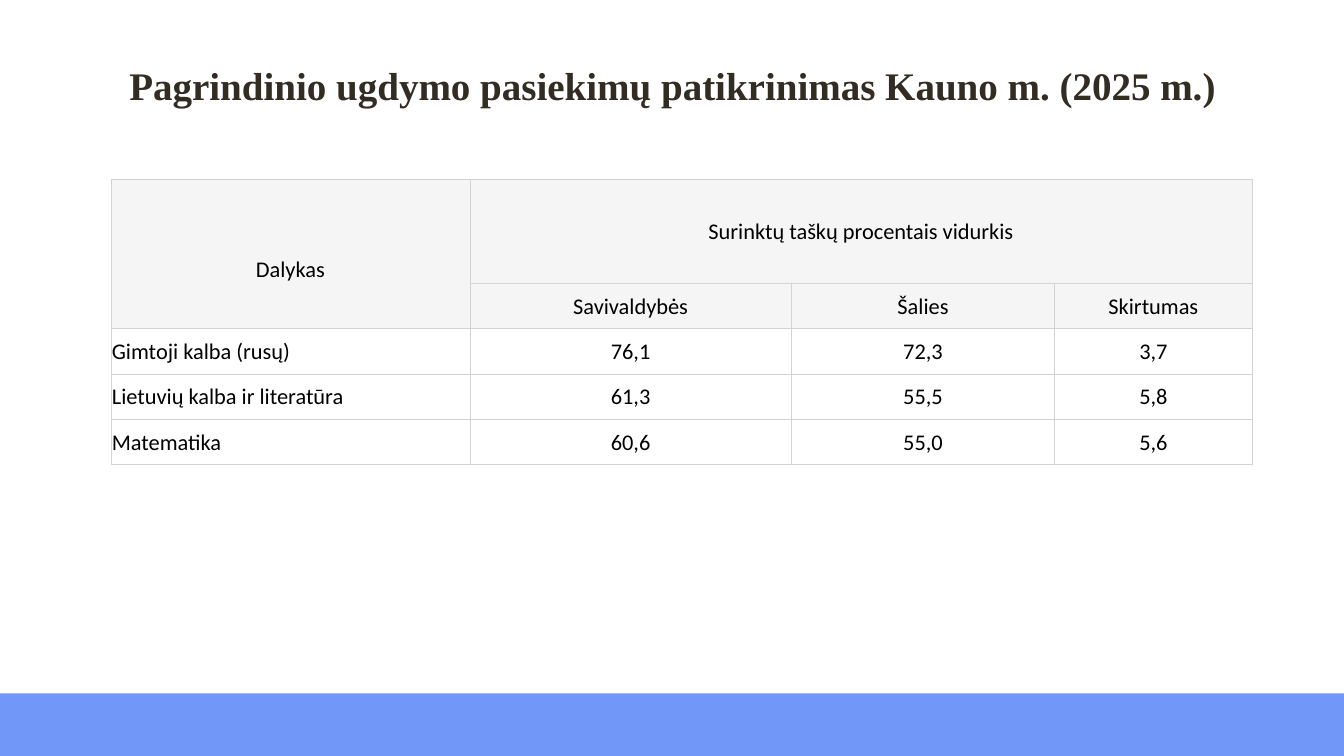
from dataclasses import dataclass

from lxml import etree
from pptx import Presentation
from pptx.dml.color import RGBColor
from pptx.enum.shapes import MSO_SHAPE
from pptx.enum.text import MSO_ANCHOR, MSO_AUTO_SIZE, PP_ALIGN
from pptx.oxml.ns import qn
from pptx.util import Inches, Pt

RECTANGLE = MSO_SHAPE.RECTANGLE
MIDDLE, BOTTOM = MSO_ANCHOR.MIDDLE, MSO_ANCHOR.BOTTOM
CENTER, LEFT = PP_ALIGN.CENTER, PP_ALIGN.LEFT
NO_AUTOFIT = MSO_AUTO_SIZE.NONE


@dataclass(frozen=True)
class Theme:
    """Colours, fonts and type sizes of the slide."""
    title_font: str = "Times New Roman"
    title_size: float = 27.9
    title_color: str = "322C23"
    table_font: str = "Calibri"
    table_size: float = 16
    table_color: str = "000000"
    header_fill: str = "F5F5F5"
    border_color: str = "D3D3D3"
    border_width: float = 0.5
    bar_fill: str = "7198F8"


THEME = Theme()
TITLE = "Pagrindinio ugdymo pasiekimų patikrinimas Kauno m. (2025 m.)"
HEADER_ROWS = 2
COLUMN_WIDTHS = (3.56, 3.19, 2.61, 1.96)
ROW_HEIGHTS = (1.03, 0.45, 0.45, 0.45, 0.45)
RESULTS = (
    ("Dalykas", "Surinktų taškų procentais vidurkis", "", ""),
    ("", "Savivaldybės", "Šalies", "Skirtumas"),
    ("Gimtoji kalba (rusų)", "76,1", "72,3", "3,7"),
    ("Lietuvių kalba ir literatūra", "61,3", "55,5", "5,8"),
    ("Matematika", "60,6", "55,0", "5,6"),
)


def add_text(paragraph, text, font_name, size, color, bold=False):
    """Add one formatted run to a paragraph."""
    run = paragraph.add_run()
    run.text = text
    run.font.name = font_name
    run.font.size = Pt(size)
    run.font.bold = bold
    run.font.color.rgb = RGBColor.from_string(color)


def add_bottom_bar(slide):
    """Draw the coloured bar along the bottom edge."""
    bar = slide.shapes.add_shape(
        RECTANGLE, Inches(0), Inches(6.88), Inches(13.33), Inches(0.62))
    bar.shadow.inherit = False
    bar.fill.solid()
    bar.fill.fore_color.rgb = RGBColor.from_string(THEME.bar_fill)
    bar.line.fill.background()


def fill_title(slide):
    """Place and format the title placeholder."""
    title = slide.shapes.title
    title.left, title.top = Inches(0.92), Inches(0.4)
    title.width, title.height = Inches(11.5), Inches(0.73)
    frame = title.text_frame
    frame.auto_size = NO_AUTOFIT
    frame.word_wrap = True
    frame.vertical_anchor = BOTTOM
    paragraph = frame.paragraphs[0]
    paragraph.alignment = CENTER
    paragraph.line_spacing = 0.9
    add_text(paragraph, TITLE, THEME.title_font, THEME.title_size,
             THEME.title_color, bold=True)


def set_borders(cell, hidden_side):
    """Outline a cell, leaving the hidden side without a line."""
    properties = cell._tc.get_or_add_tcPr()
    for side in "LRTB":
        line = etree.SubElement(properties, qn(f"a:ln{side}"),
                                w=str(Pt(THEME.border_width)))
        if side == hidden_side:
            etree.SubElement(line, qn("a:noFill"))
        else:
            fill = etree.SubElement(line, qn("a:solidFill"))
            etree.SubElement(fill, qn("a:srgbClr"), val=THEME.border_color)


def format_cell(cell, text, row, column):
    """Write a cell and set its margins, borders and fill."""
    is_header = row < HEADER_ROWS
    is_subject = column == 0
    cell.margin_left = cell.margin_right = cell.margin_top = Inches(0.01)
    cell.margin_bottom = Inches(0)
    cell.vertical_anchor = BOTTOM if row == 0 and is_subject else MIDDLE
    set_borders(cell, "BT"[row] if is_header and is_subject else None)
    if is_header:
        cell.fill.solid()
        cell.fill.fore_color.rgb = RGBColor.from_string(THEME.header_fill)
    else:
        cell.fill.background()
    if text:
        paragraph = cell.text_frame.paragraphs[0]
        paragraph.alignment = LEFT if is_subject and not is_header else CENTER
        add_text(paragraph, text, THEME.table_font, THEME.table_size,
                 THEME.table_color)


def add_results_table(slide):
    """Add the table of average scores."""
    table = slide.shapes.add_table(
        len(ROW_HEIGHTS), len(COLUMN_WIDTHS), Inches(1.1), Inches(1.78),
        Inches(sum(COLUMN_WIDTHS)), Inches(sum(ROW_HEIGHTS))).table
    table.first_row = table.horz_banding = False
    for column, width in zip(table.columns, COLUMN_WIDTHS):
        column.width = Inches(width)
    for row, height in zip(table.rows, ROW_HEIGHTS):
        row.height = Inches(height)
    table.cell(0, 1).merge(table.cell(0, 3))
    for row_index, texts in enumerate(RESULTS):
        for column_index, text in enumerate(texts):
            format_cell(table.cell(row_index, column_index), text,
                        row_index, column_index)


def main():
    """Build and save the slide."""
    presentation = Presentation()
    presentation.slide_width = Inches(13.33)
    presentation.slide_height = Inches(7.5)
    title_only = presentation.slide_layouts[5]
    slide = presentation.slides.add_slide(title_only)
    add_bottom_bar(slide)
    fill_title(slide)
    add_results_table(slide)
    presentation.save("out.pptx")


if __name__ == "__main__":
    main()
